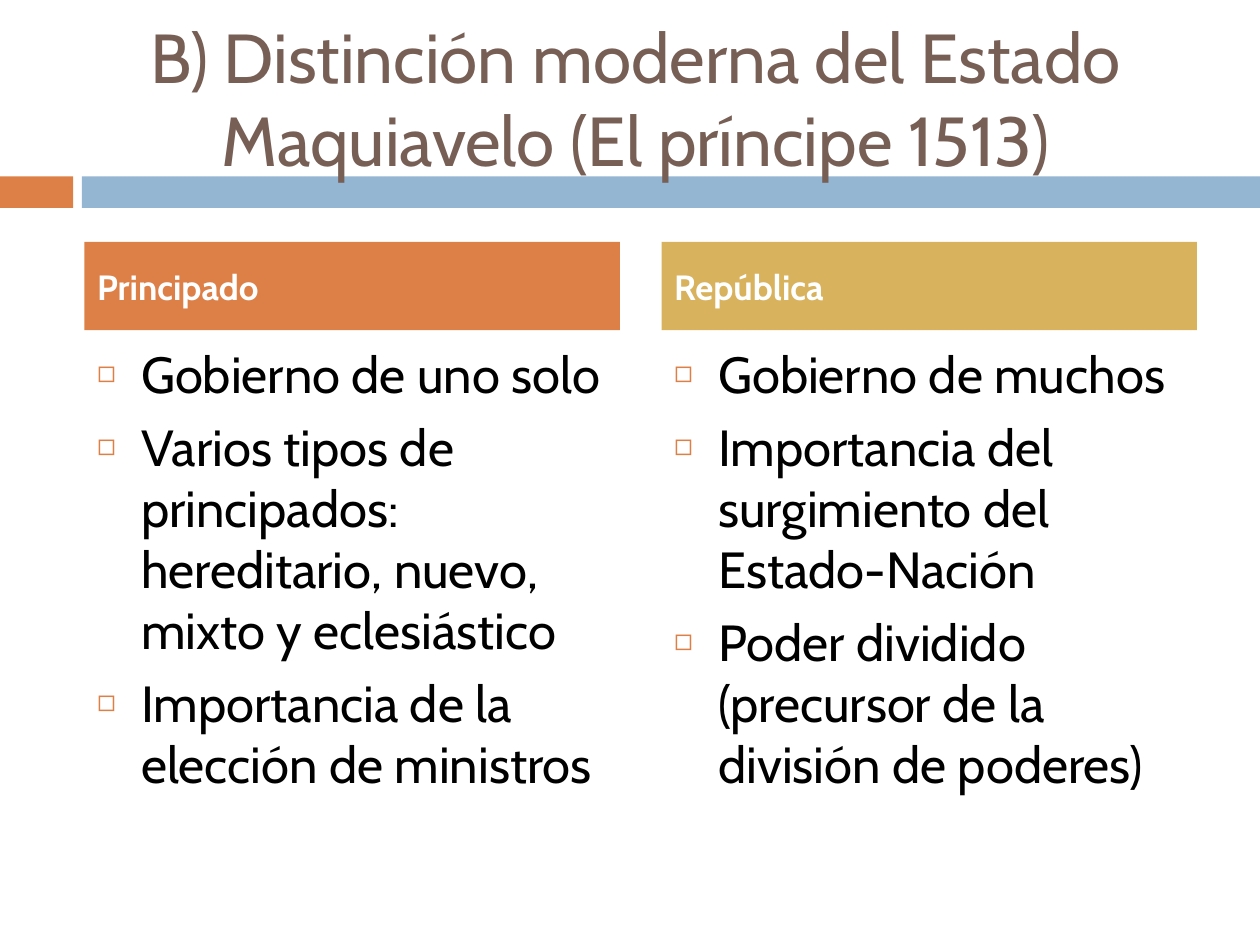
from dataclasses import dataclass

from lxml import etree
from pptx import Presentation
from pptx.dml.color import RGBColor
from pptx.enum.shapes import MSO_SHAPE
from pptx.enum.text import MSO_ANCHOR, MSO_AUTO_SIZE, PP_ALIGN
from pptx.oxml.ns import qn
from pptx.util import Inches, Pt

RECTANGLE = MSO_SHAPE.RECTANGLE
TOP, MIDDLE = MSO_ANCHOR.TOP, MSO_ANCHOR.MIDDLE
LEFT, CENTER = PP_ALIGN.LEFT, PP_ALIGN.CENTER
NO_AUTOFIT = MSO_AUTO_SIZE.NONE

ORANGE = RGBColor(0xDD, 0x80, 0x47)
BLUE = RGBColor(0x94, 0xB6, 0xD2)
GOLD = RGBColor(0xD8, 0xB2, 0x5C)
BROWN = RGBColor(0x77, 0x5F, 0x55)
BLACK = RGBColor(0, 0, 0)
WHITE = RGBColor(0xFF, 0xFF, 0xFF)

FONT = "Cabin"
TITLE_FORMAT = {"name": FONT, "size": Pt(39.6), "bold": False}
HEADING_FORMAT = {"name": FONT, "size": Pt(20), "bold": True}
LIST_FORMAT = {"name": FONT, "size": Pt(29), "bold": False}

COMPARISON_LAYOUT = 4
COLUMN_WIDTH = 4.25
LIST_INDENT = Inches(0.35)


@dataclass
class Column:
    left: float
    heading_index: int
    list_index: int
    color: RGBColor
    heading: str
    items: list[str]


COLUMNS = [
    Column(0.67, 1, 2, ORANGE, "Principado", [
        "Gobierno de uno solo",
        "Varios tipos de principados: hereditario, nuevo, mixto y eclesiástico",
        "Importancia de la elección de ministros",
    ]),
    Column(5.25, 3, 4, GOLD, "República", [
        "Gobierno de muchos",
        "Importancia del surgimiento del Estado-Nación",
        "Poder dividido (precursor de la división de poderes)",
    ]),
]


def place(shape, left: float, top: float, width: float, height: float) -> None:
    shape.left, shape.top = Inches(left), Inches(top)
    shape.width, shape.height = Inches(width), Inches(height)


def write(shape, texts: list[str], font_format: dict, color: RGBColor,
          anchor, alignment, space_before: float) -> None:
    frame = shape.text_frame
    frame.text = "\n".join(texts)
    frame.word_wrap = True
    frame.auto_size = NO_AUTOFIT
    frame.vertical_anchor = anchor
    for paragraph in frame.paragraphs:
        paragraph.alignment = alignment
        paragraph.space_before = Pt(space_before)
        font = paragraph.runs[0].font
        for attribute, value in font_format.items():
            setattr(font, attribute, value)
        font.color.rgb = color


def add_bullet(paragraph) -> None:
    properties = paragraph._p.get_or_add_pPr()
    properties.set("marL", str(LIST_INDENT))
    properties.set("indent", str(-LIST_INDENT))
    bullet_color = etree.SubElement(properties, qn("a:buClr"))
    etree.SubElement(bullet_color, qn("a:srgbClr"), val=str(ORANGE))
    etree.SubElement(properties, qn("a:buSzPct"), val="60000")
    etree.SubElement(properties, qn("a:buChar"), char="◻")


def add_band(slide, left: float, width: float, color: RGBColor) -> None:
    band = slide.shapes.add_shape(
        RECTANGLE, Inches(left), Inches(1.4), Inches(width), Inches(0.25))
    band.shadow.inherit = False
    band.fill.solid()
    band.fill.fore_color.rgb = color
    band.line.fill.background()
    # Bands lie behind the title
    slide.shapes._spTree.insert(2, band._element)


def fill_column(slide, column: Column) -> None:
    placeholders = {item.placeholder_format.idx: item for item in slide.placeholders}

    heading = placeholders[column.heading_index]
    place(heading, column.left, 1.92, COLUMN_WIDTH, 0.7)
    heading.fill.solid()
    heading.fill.fore_color.rgb = column.color
    write(heading, [column.heading], HEADING_FORMAT, WHITE, MIDDLE, LEFT, 7)

    body = placeholders[column.list_index]
    place(body, column.left, 2.67, COLUMN_WIDTH, 3.92)
    write(body, column.items, LIST_FORMAT, BLACK, TOP, LEFT, 7)
    for paragraph in body.text_frame.paragraphs:
        add_bullet(paragraph)


def main() -> None:
    presentation = Presentation()
    presentation.slide_width, presentation.slide_height = Inches(10), Inches(7.5)
    slide = presentation.slides.add_slide(presentation.slide_layouts[COMPARISON_LAYOUT])

    # Title and the bands under it
    add_band(slide, 0, 0.58, ORANGE)
    add_band(slide, 0.65, 9.35, BLUE)
    title = slide.shapes.title
    place(title, 0.28, 0.3, 9.53, 0.95)
    write(title, ["B) Distinción moderna del Estado Maquiavelo (El príncipe 1513)"],
          TITLE_FORMAT, BROWN, MIDDLE, CENTER, 0)

    # Compared columns
    for column in COLUMNS:
        fill_column(slide, column)

    presentation.save("out.pptx")


if __name__ == "__main__":
    main()
